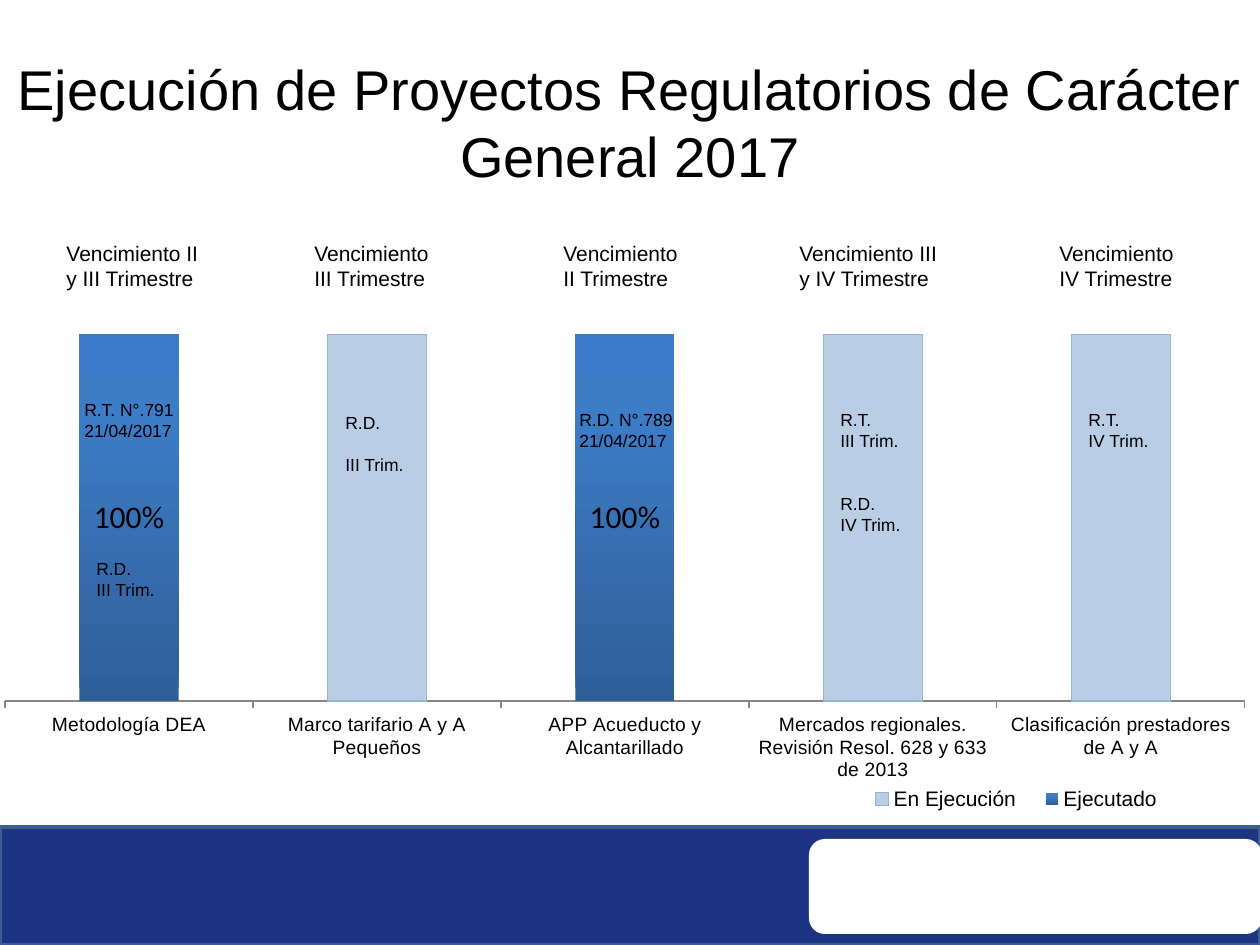
from lxml.etree import SubElement
from pptx import Presentation
from pptx.chart.data import CategoryChartData
from pptx.dml.color import RGBColor
from pptx.enum.chart import (XL_CHART_TYPE, XL_LABEL_POSITION, XL_LEGEND_POSITION,
                             XL_TICK_LABEL_POSITION, XL_TICK_MARK)
from pptx.enum.shapes import MSO_SHAPE
from pptx.enum.text import PP_ALIGN
from pptx.oxml import parse_xml
from pptx.oxml.ns import nsdecls, qn
from pptx.util import Pt

THEME = {
    "text": "000000", "white": "FFFFFF", "band": "1C3481", "band_line": "3A5F8C",
    "axis": "868686", "pending": "B9CDE5", "pending_line": "95B3D7",
    "done": [(0, "2F5F99"), (80, "3D7CC7"), (100, "3A7CCB")],
    "font": "Arial", "label_font": "Calibri",
    "title": 32, "label": 18, "legend": 12, "heading": 12, "category": 11, "note": 10,
}

# One entry per column: category, done, heading (text, dx, width),
# notes (dx, y, width, height, [(line, space before)]); dx is from the column's centre.
COLUMNS = [
    ("Metodología DEA", 1, ("Vencimiento II y III Trimestre", -75, 159), [
        (-57, 159, 141, 55, [("R.T. N°.791", 0), ("21/04/2017", 0)]),
        (-45, 318, 100, 55, [("R.D.", 0), ("III Trim.", 0)])]),
    ("Marco tarifario A y A Pequeños", 0, ("Vencimiento III Trimestre", -75, 149), [
        (-44, 172, 89, 77, [("R.D.", 0), ("III Trim.", 12)])]),
    ("APP Acueducto y Alcantarillado", 1, ("Vencimiento II Trimestre", -74, 149), [
        (-58, 169, 127, 55, [("R.D. N°.789", 0), ("21/04/2017", 0)])]),
    ("Mercados regionales. Revisión Resol. 628 y 633 de 2013", 0,
     ("Vencimiento III y IV Trimestre", -86, 170), [
        (-45, 169, 89, 140, [("R.T.", 0), ("III Trim.", 0), ("R.D.", 24), ("IV Trim.", 0)])]),
    ("Clasificación prestadores de A y A", 0, ("Vencimiento IV Trimestre", -74, 149), [
        (-45, 169, 89, 55, [("R.T.", 0), ("IV Trim.", 0)])]),
]


def px(n):
    return round(n * 914400 / 126)


def emu(box):
    return [px(n) for n in box]


def rgb(name):
    return RGBColor.from_string(THEME[name])


def style(font, size, face="font"):
    for key, value in {"size": Pt(THEME[size]), "name": THEME[face]}.items():
        setattr(font, key, value)
    font.color.rgb = rgb("text")


def add_text(s, box, lines, size, align=PP_ALIGN.LEFT):
    """Add a text box from (line, space before) pairs."""
    tf = s.shapes.add_textbox(*emu(box)).text_frame
    tf.word_wrap = True
    for i, (line, before) in enumerate(lines):
        p = tf.add_paragraph() if i else tf.paragraphs[0]
        p.alignment = align
        if before:
            p.space_before = Pt(before)
        r = p.add_run()
        r.text = line
        style(r.font, size)
    return tf


def add_title(s, box):
    tf = add_text(s, box, [("Ejecución de Proyectos Regulatorios de Carácter General 2017", 0)],
                  "title", PP_ALIGN.CENTER)
    rPr = tf.paragraphs[0].runs[0].font._element
    shadow = parse_xml(
        f'<a:effectLst {nsdecls("a")}><a:outerShdw blurRad="38100" dist="38100" dir="2700000" '
        'algn="tl"><a:srgbClr val="000000"><a:alpha val="43000"/></a:srgbClr>'
        '</a:outerShdw></a:effectLst>')
    rPr.find(qn("a:solidFill")).addnext(shadow)


def add_footer(s, box):
    x, y, w, h = box
    panel = (x + 809, y + 12, 453, 95)
    for kind, place, fill, line in [(MSO_SHAPE.RECTANGLE, box, "band", "band_line"),
                                    (MSO_SHAPE.ROUNDED_RECTANGLE, panel, "white", None)]:
        sp = s.shapes.add_shape(kind, *emu(place))
        sp.shadow.inherit = False
        sp.fill.solid()
        sp.fill.fore_color.rgb = rgb(fill)
        if line:
            sp.line.color.rgb = rgb(line)
            sp.line.width = Pt(2)
        else:
            sp.line.fill.background()


def set_layout(parent, index, inner=False, **place):
    """Give a plot area or a legend a fixed place, in fractions of the chart."""
    for old in parent.findall(qn("c:layout")):
        parent.remove(old)
    layout = parse_xml(f'<c:layout {nsdecls("c")}><c:manualLayout/></c:layout>')
    values = {"layoutTarget": "inner"} if inner else {}
    values.update(xMode="edge", yMode="edge", **place)
    for key, value in values.items():
        SubElement(layout[0], qn(f"c:{key}")).set("val", str(value))
    parent.insert(index, layout)


def fill_series(done, pending):
    done.format.fill.gradient()
    done.format.fill.gradient_angle = 90
    stops = done._element.find(".//" + qn("a:gsLst"))
    for stop in list(stops):
        stops.remove(stop)
    for pos, color in THEME["done"]:
        gs = SubElement(stops, qn("a:gs"), pos=str(pos * 1000))
        SubElement(gs, qn("a:srgbClr"), val=color)
    pending.format.fill.solid()
    pending.format.fill.fore_color.rgb = rgb("pending")
    pending.format.line.color.rgb = rgb("pending_line")
    pending.format.line.width = Pt(0.75)
    for series in (done, pending):
        series.invert_if_negative = False


def add_progress_chart(s, box):
    data = CategoryChartData(number_format="0%")
    data.categories = [c[0] for c in COLUMNS]
    data.add_series("Ejecutado", [c[1] for c in COLUMNS])
    data.add_series("En Ejecución", [1] * len(COLUMNS))
    chart = s.shapes.add_chart(XL_CHART_TYPE.COLUMN_STACKED, *emu(box), data).chart
    chart.has_title = False
    style(chart.font, "label", "label_font")

    plot = chart.plots[0]
    for key, value in {"gap_width": 150, "overlap": 100, "vary_by_categories": False}.items():
        setattr(plot, key, value)
    fill_series(*plot.series)
    labels = plot.series[0].data_labels
    for key, value in {"show_value": True, "number_format": "0%;;",
                       "number_format_is_linked": False,
                       "position": XL_LABEL_POSITION.CENTER}.items():
        setattr(labels, key, value)
    style(labels.font, "label", "label_font")

    axis = chart.value_axis
    for key, value in {"minimum_scale": 0.1, "maximum_scale": 1, "visible": False,
                       "has_major_gridlines": False}.items():
        setattr(axis, key, value)
    axis = chart.category_axis
    for key, value in {"major_tick_mark": XL_TICK_MARK.OUTSIDE,
                       "tick_label_position": XL_TICK_LABEL_POSITION.LOW}.items():
        setattr(axis, key, value)
    axis.format.line.color.rgb = rgb("axis")
    style(axis.tick_labels.font, "category")

    chart.has_legend = True
    legend = chart.legend
    legend.position = XL_LEGEND_POSITION.RIGHT
    legend.include_in_layout = False
    style(legend.font, "legend")
    set_layout(legend._element, 1, x=0.68, y=0.92, w=0.26, h=0.07)
    set_layout(chart._chartSpace.chart.plotArea, 0, inner=True,
               x=0.004, y=0.04, w=0.988, h=0.722)


def add_progress(s, box):
    """Place the chart with a heading above and notes on each column."""
    x, y, w, h = box
    add_progress_chart(s, (x, y + 80, w, h - 80))
    pitch = 248
    for i, (_, _, (heading, dx, width), notes) in enumerate(COLUMNS):
        centre = x + 5 + pitch * i + pitch // 2
        add_text(s, (centre + dx, y, width, 63), [(heading, 0)], "heading")
        for note_dx, note_y, note_w, note_h, lines in notes:
            add_text(s, (centre + note_dx, y + note_y, note_w, note_h), lines, "note")


def main():
    prs = Presentation()
    prs.slide_width, prs.slide_height = px(1260), px(945)
    s = prs.slides.add_slide(prs.slide_layouts[6])
    add_footer(s, (0, 827, 1260, 118))
    add_title(s, (5, 48, 1250, 149))
    add_progress(s, (0, 234, 1255, 588))
    prs.save("out.pptx")


if __name__ == "__main__":
    main()
